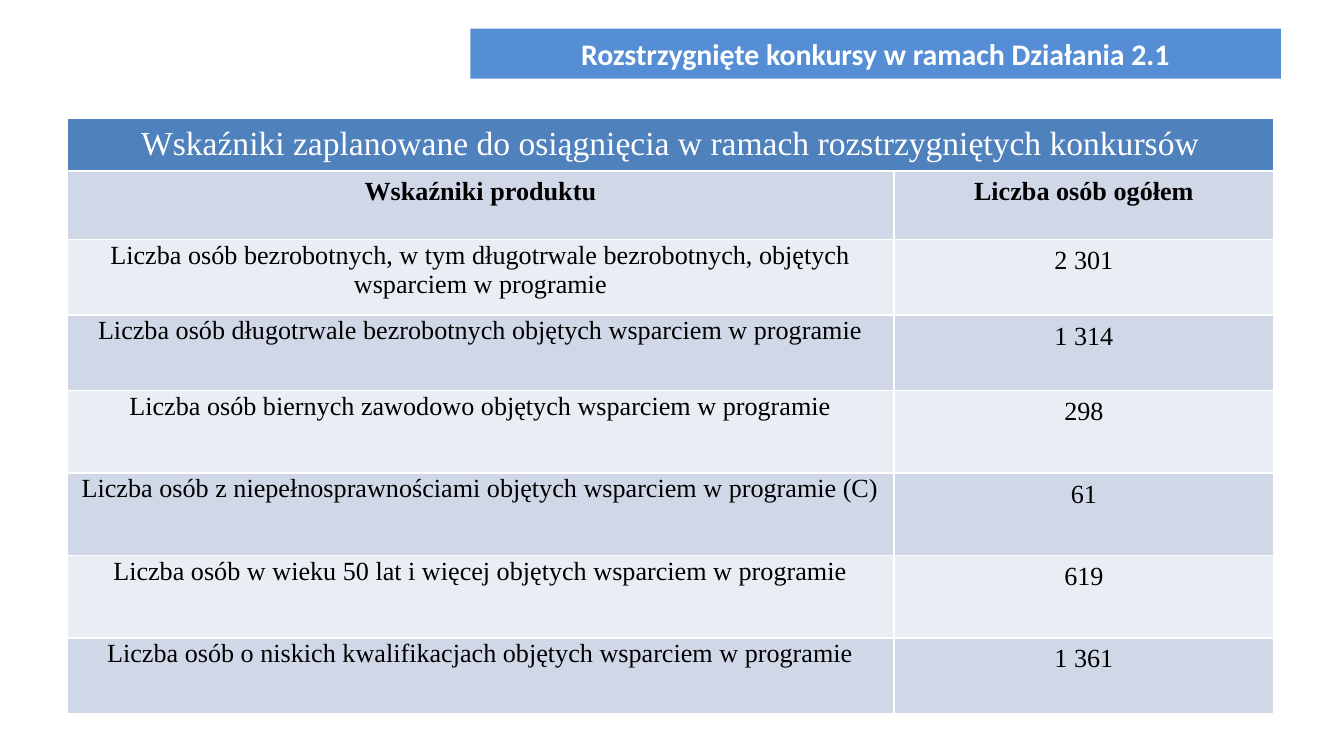
from dataclasses import dataclass

from pptx import Presentation
from pptx.dml.color import RGBColor
from pptx.enum.text import MSO_ANCHOR, MSO_AUTO_SIZE, PP_ALIGN
from pptx.table import _Cell
from pptx.text.text import TextFrame
from pptx.util import Inches, Pt

CENTER = PP_ALIGN.CENTER
MIDDLE = MSO_ANCHOR.MIDDLE
NO_AUTOFIT = MSO_AUTO_SIZE.NONE

WHITE = RGBColor(0xFF, 0xFF, 0xFF)
BLACK = RGBColor(0, 0, 0)
BANNER_BLUE = RGBColor(0x55, 0x8E, 0xD5)
HEADER_BLUE = RGBColor(0x4F, 0x81, 0xBD)
BANDS = (RGBColor(0xD0, 0xD8, 0xE8), RGBColor(0xE9, 0xED, 0xF4))

SLIDE_WIDTH = Inches(10)
SLIDE_HEIGHT = Inches(5.625)
# Shares of the slide's width and height
COLUMN_SHARES = (0.615, 0.283)
HEADER_SHARE = 0.069
HEADING_SHARE = 0.091


@dataclass(frozen=True)
class TextStyle:
    font: str
    size: int
    color: RGBColor
    bold: bool = False


@dataclass(frozen=True)
class Indicator:
    label: str
    people: str
    height_share: float


BANNER_STYLE = TextStyle("Calibri", 16, WHITE, True)
HEADER_STYLE = TextStyle("Times New Roman", 18, WHITE)
HEADING_STYLE = TextStyle("Times New Roman", 14, BLACK, True)
BODY_STYLE = TextStyle("Times New Roman", 14, BLACK)

HEADINGS = ("Wskaźniki produktu", "Liczba osób ogółem")
INDICATORS = (
    Indicator("Liczba osób bezrobotnych, w tym długotrwale bezrobotnych, "
              "objętych wsparciem w programie", "2 301", 0.1),
    Indicator("Liczba osób długotrwale bezrobotnych objętych wsparciem w programie",
              "1 314", 0.1),
    Indicator("Liczba osób biernych zawodowo objętych wsparciem w programie",
              "298", 0.109),
    Indicator("Liczba osób z niepełnosprawnościami objętych wsparciem w programie (C)",
              "61", 0.109),
    Indicator("Liczba osób w wieku 50 lat i więcej objętych wsparciem w programie",
              "619", 0.109),
    Indicator("Liczba osób o niskich kwalifikacjach objętych wsparciem w programie",
              "1 361", 0.1),
)


def across(share: float) -> int:
    return round(SLIDE_WIDTH * share)


def down(share: float) -> int:
    return round(SLIDE_HEIGHT * share)


def write(frame: TextFrame, text: str, style: TextStyle) -> None:
    para = frame.paragraphs[0]
    para.text = text
    para.alignment = CENTER
    para.font.name = style.font
    para.font.size = Pt(style.size)
    para.font.bold = style.bold
    para.font.color.rgb = style.color


def fill_cell(cell: _Cell, text: str, style: TextStyle, color: RGBColor) -> None:
    cell.fill.solid()
    cell.fill.fore_color.rgb = color
    write(cell.text_frame, text, style)


def tighten(cell: _Cell) -> None:
    cell.margin_left = cell.margin_right = cell.margin_top = Inches(0.01)
    cell.margin_bottom = 0


def add_banner(slide) -> None:
    banner = slide.shapes.title
    banner.left, banner.top = across(0.35), down(0.038)
    banner.width, banner.height = across(0.603), down(0.066)
    banner.fill.solid()
    banner.fill.fore_color.rgb = BANNER_BLUE
    frame = banner.text_frame
    frame.auto_size = NO_AUTOFIT
    frame.vertical_anchor = MIDDLE
    write(frame, "Rozstrzygnięte konkursy w ramach Działania 2.1", BANNER_STYLE)


def add_indicator_table(slide) -> None:
    row_shares = (HEADER_SHARE, HEADING_SHARE,
                  *(indicator.height_share for indicator in INDICATORS))
    table = slide.shapes.add_table(
        len(row_shares), len(COLUMN_SHARES), across(0.05), down(0.157),
        across(sum(COLUMN_SHARES)), down(sum(row_shares))).table
    for column, share in zip(table.columns, COLUMN_SHARES):
        column.width = across(share)
    for row, share in zip(table.rows, row_shares):
        row.height = down(share)

    header = table.cell(0, 0)
    header.merge(table.cell(0, 1))
    fill_cell(header,
              "Wskaźniki zaplanowane do osiągnięcia w ramach rozstrzygniętych konkursów",
              HEADER_STYLE, HEADER_BLUE)
    for column, heading in enumerate(HEADINGS):
        fill_cell(table.cell(1, column), heading, HEADING_STYLE, BANDS[0])
    for row, indicator in enumerate(INDICATORS, start=2):
        band = BANDS[(row - 1) % 2]
        label = table.cell(row, 0)
        tighten(label)
        fill_cell(label, indicator.label, BODY_STYLE, band)
        fill_cell(table.cell(row, 1), indicator.people, BODY_STYLE, band)


def main() -> None:
    deck = Presentation()
    deck.slide_width, deck.slide_height = SLIDE_WIDTH, SLIDE_HEIGHT
    slide = deck.slides.add_slide(deck.slide_layouts[5])
    add_banner(slide)
    add_indicator_table(slide)
    deck.save("out.pptx")


if __name__ == "__main__":
    main()
